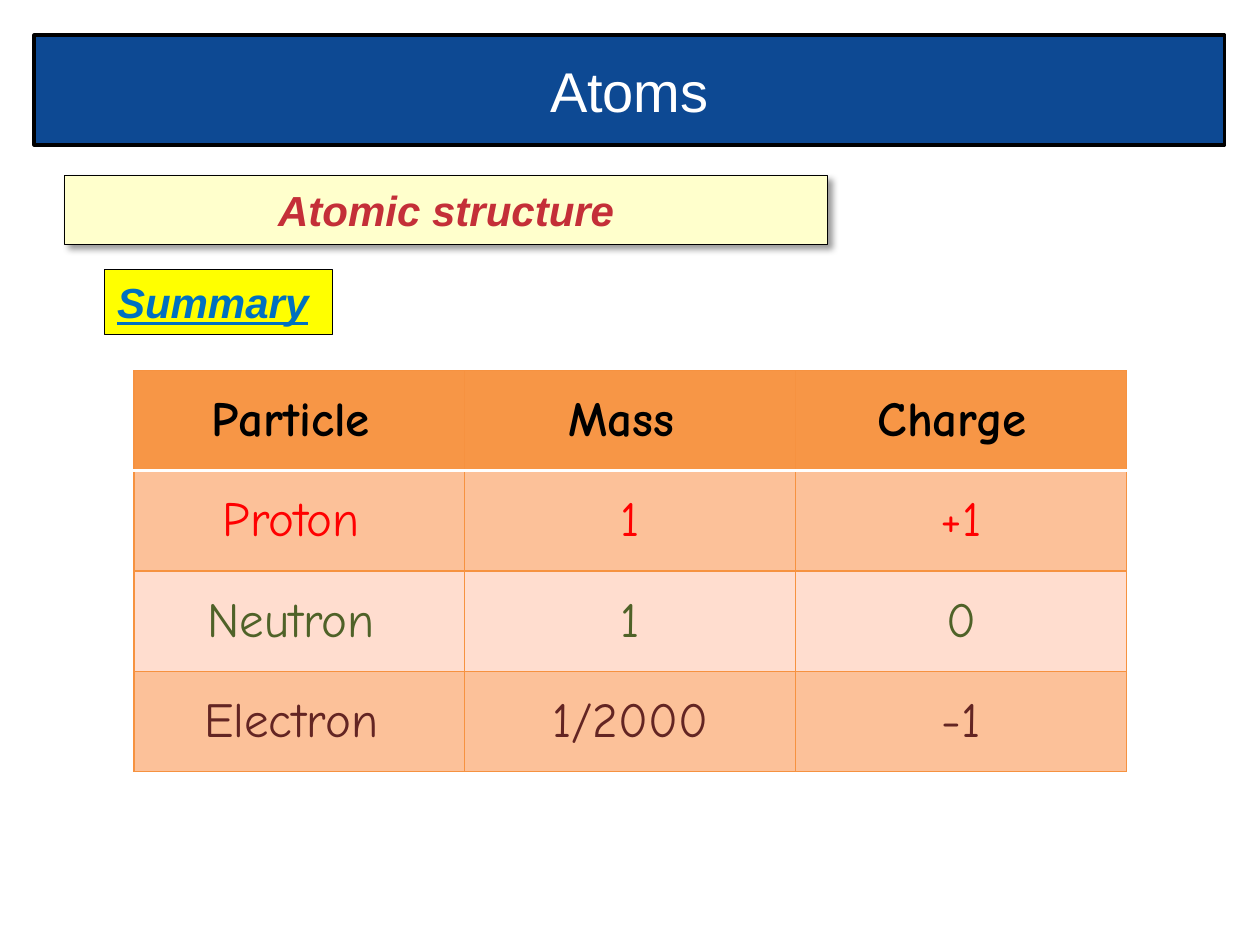
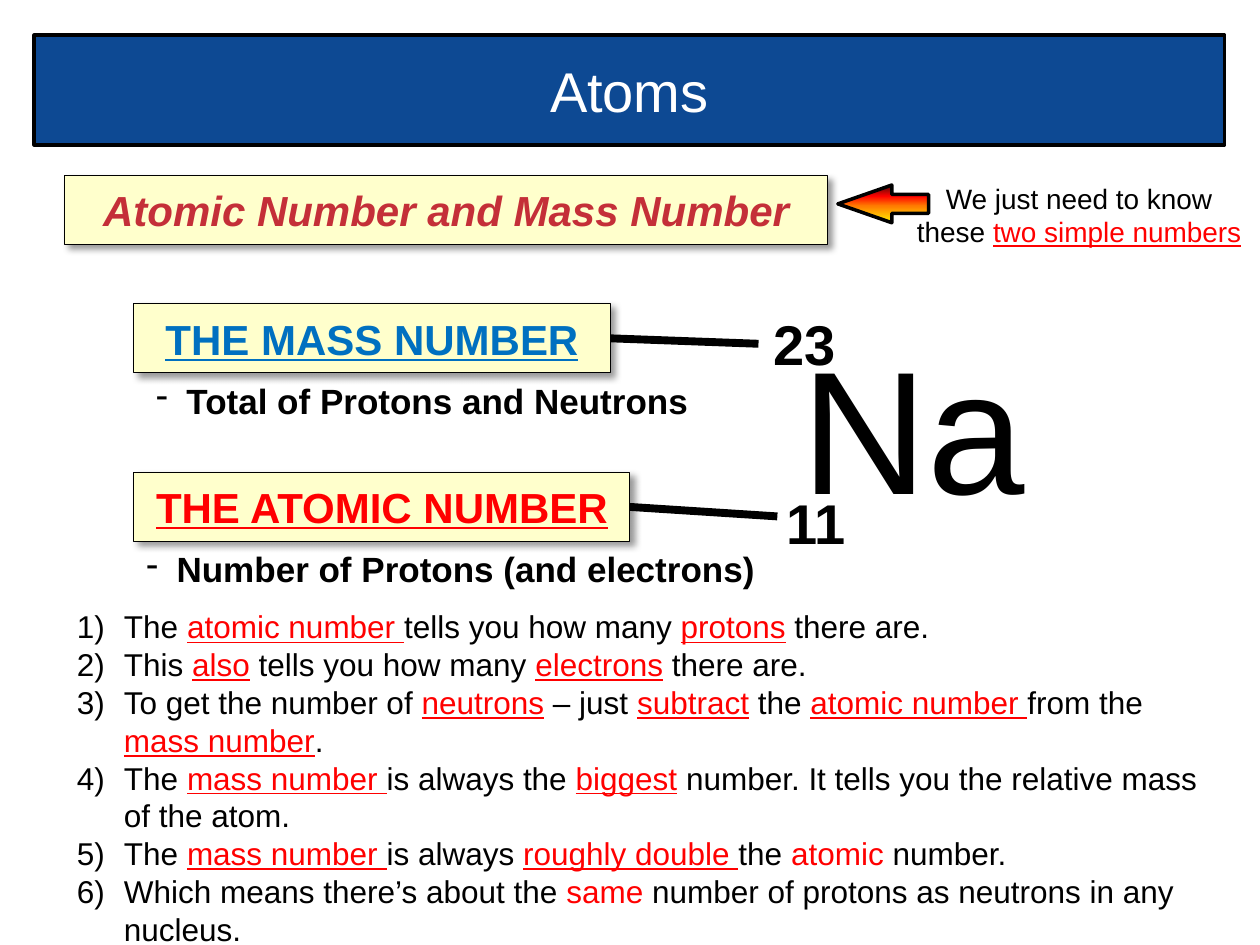
import pptx
import pptx.dml.color
import pptx.enum.shapes
import pptx.enum.text
import pptx.oxml.ns
import pptx.util
from lxml import etree

Cm = pptx.util.Cm
Pt = pptx.util.Pt
qn = pptx.oxml.ns.qn
Align = pptx.enum.text.PP_ALIGN
Anchor = pptx.enum.text.MSO_ANCHOR
Shape = pptx.enum.shapes.MSO_SHAPE

COLOURS = {
    "black": "000000", "white": "FFFFFF", "navy": "0D4993", "cream": "FFFFCC",
    "yellow": "FFFF00", "crimson": "C42F38", "blue": "0070C0", "red": "FF0000",
    "green": "4F6228", "maroon": "632523", "orange": "F79646",
    "grid": "F69240", "row_dark": "FCC199", "row_light": "FFDDCF",
}
FLAME = [(0, "FFF200"), (45, "FF7A00"), (70, "FF0300"), (100, "4D0808")]
BODY_FONT = "Arial"
TABLE_FONT = "Comic Neue"

PARTICLES = [
    ("Particle ", "Mass ", "Charge "),
    ("Proton ", "1", "+1"),
    ("Neutron ", "1", "0"),
    ("Electron ", "1/2000", "-1"),
]
ROW_STYLES = [("orange", "black"), ("row_dark", "red"),
              ("row_light", "green"), ("row_dark", "maroon")]

FACTS = [
    "The |_atomic number |tells you how many |_protons| there are.",
    "This |_also| tells you how many |_electrons| there are.",
    "To get the number of |_neutrons| – just |_subtract| the "
    "|_atomic number |from the |_mass number|.",
    "The |_mass number |is always the |_biggest| number. "
    "It tells you the relative mass of the atom.",
    "The |_mass number |is always |_roughly double |the |atomic |number.",
    "Which means there’s about the |same| number of protons as neutrons in any nucleus.",
]


def colour(name):
    return pptx.dml.color.RGBColor.from_string(COLOURS[name])


def add_xml(parent, tag, **attributes):
    element = etree.SubElement(parent, qn(tag))
    for key, value in attributes.items():
        element.set(key, str(value))
    return element


def add_solid(parent, code):
    return add_xml(add_xml(parent, "a:solidFill"), "a:srgbClr", val=code)


def set_font(font, size, ink="black", name=BODY_FONT, bold=False, italic=False, underline=False):
    font.name = name
    font.size = Pt(size)
    font.color.rgb = colour(ink)
    font.bold = bold
    font.italic = italic
    font.underline = underline


def write(para, text, size, align=Align.LEFT, **style):
    para.alignment = align
    set_font(para.font, size, **style)
    for index, piece in enumerate(text.split("|")):
        span = para.add_run()
        span.text = piece.removeprefix("_")
        if index % 2:
            span.font.color.rgb = colour("red")
            span.font.underline = piece.startswith("_")


def set_bullet(para, indent, tag, **attributes):
    properties = para._p.get_or_add_pPr()
    properties.set("marL", str(Cm(indent)))
    properties.set("indent", str(-Cm(indent)))
    properties.insert(0, add_xml(properties, tag, **attributes))


def add_shadow(box):
    effects = box._element.spPr.find(qn("a:effectLst"))
    shadow = add_xml(effects, "a:outerShdw", blurRad=Pt(4), dist=Pt(3),
                     dir=45 * 60000, algn="tl", rotWithShape=0)
    tint = add_xml(shadow, "a:srgbClr", val=COLOURS["black"])
    add_xml(tint, "a:alpha", val=40000)


def add_shape(page, kind, place, line_width):
    box = page.shapes.add_shape(kind, *map(Cm, place))
    box.shadow.inherit = False
    box.line.color.rgb = colour("black")
    box.line.width = Pt(line_width)
    return box


def add_panel(page, place, text, size, fill, line_width=0.5, shadow=False,
              align=Align.CENTER, **style):
    box = add_shape(page, Shape.RECTANGLE, place, line_width)
    box.fill.solid()
    box.fill.fore_color.rgb = colour(fill)
    if shadow:
        add_shadow(box)
    frame = box.text_frame
    frame.word_wrap = True
    frame.vertical_anchor = Anchor.MIDDLE
    write(frame.paragraphs[0], text, size, align, **style)


def add_label(page, place, lines, size, align=Align.LEFT, **style):
    frame = page.shapes.add_textbox(*map(Cm, place)).text_frame
    frame.word_wrap = True
    frame.auto_size = pptx.enum.text.MSO_AUTO_SIZE.SHAPE_TO_FIT_TEXT
    for index, line in enumerate(lines):
        para = frame.add_paragraph() if index else frame.paragraphs[0]
        write(para, line, size, align, **style)
    return frame.paragraphs


def add_flame_arrow(page, place):
    arrow = add_shape(page, Shape.RIGHT_ARROW, place, 2)
    arrow.rotation = 180
    arrow.adjustments[1] = 1.43
    arrow.fill.gradient()
    arrow.fill.gradient_angle = 270
    stops = arrow._element.spPr.find(".//" + qn("a:gsLst"))
    stops.clear()
    for position, code in FLAME:
        add_xml(add_xml(stops, "a:gs", pos=position * 1000), "a:srgbClr", val=code)


def add_pointer(page, start, end):
    pointer = page.shapes.add_connector(
        pptx.enum.shapes.MSO_CONNECTOR.STRAIGHT, *map(Cm, start + end))
    pointer.line.color.rgb = colour("black")
    pointer.line.width = Pt(4.5)
    add_xml(pointer._element.spPr, "a:effectLst")


def set_borders(cell, row):
    properties = cell._tc.get_or_add_tcPr()
    white_side = {0: "a:lnB", 1: "a:lnT"}.get(row)
    for index, side in enumerate(("a:lnL", "a:lnR", "a:lnT", "a:lnB")):
        ink, width = ("white", 2) if side == white_side else ("grid", 0.75)
        border = add_xml(properties, side, w=Pt(width))
        add_solid(border, COLOURS[ink])
        properties.insert(index, border)


def add_particle_table(page, left, top, column_width, row_height):
    rows, columns = len(PARTICLES), len(PARTICLES[0])
    table = page.shapes.add_table(rows, columns, Cm(left), Cm(top), Cm(column_width * columns),
                                  Cm(row_height * rows)).table
    for row, (values, (fill, ink)) in enumerate(zip(PARTICLES, ROW_STYLES)):
        table.rows[row].height = Cm(row_height)
        for column, value in enumerate(values):
            cell = table.cell(row, column)
            cell.fill.solid()
            cell.fill.fore_color.rgb = colour(fill)
            cell.vertical_anchor = Anchor.MIDDLE
            set_borders(cell, row)
            write(cell.text_frame.paragraphs[0], value, 28, Align.CENTER,
                  ink=ink, name=TABLE_FONT, bold=row == 0)


def add_callout(page, top, width, heading, ink, pointer_end, note_place, note):
    left, height = 2.7, 1.4
    add_panel(page, (left, top, width, height), heading, 24, "cream", shadow=True,
              ink=ink, bold=True, underline=True)
    add_pointer(page, (left + width, top + height / 2), pointer_end)
    paras = add_label(page, note_place, [note], 20, bold=True)
    set_bullet(paras[0], 0.61, "a:buChar", char="-")


def add_page(deck, topic):
    page = deck.slides.add_slide(deck.slide_layouts[6])
    add_panel(page, (0.69, 0.71, 24, 2.21), "Atoms", 32, "navy", line_width=2, ink="white")
    add_panel(page, (1.3, 3.53, 15.39, 1.4), topic, 24, "cream", shadow=True,
              ink="crimson", bold=True, italic=True)
    return page


def build_summary(deck):
    page = add_page(deck, "Atomic structure")
    add_panel(page, (2.11, 5.44, 4.6, 1.3), "Summary", 24, "yellow", line_width=0.75,
              align=Align.LEFT, ink="blue", bold=True, italic=True, underline=True)
    add_particle_table(page, 2.7, 7.47, 6.67, 2.02)


def build_numbers(deck):
    page = add_page(deck, "Atomic Number and Mass Number")
    add_label(page, (18.11, 3.53, 7.29, 1.63),
              ["We just need to know these |_two simple numbers"], 16, Align.CENTER)
    add_flame_arrow(page, (16.89, 3.73, 1.83, 0.76))
    add_label(page, (15.9, 6.32, 5.79, 4.52), ["Na"], 100)
    for left, top, number in ((15.29, 6.12, "23"), (15.49, 9.73, "11")):
        add_label(page, (left, top, 1.8, 1.63), [number], 32, Align.RIGHT, bold=True)
    add_callout(page, 6.12, 9.6, "THE MASS NUMBER", "blue", (15.29, 6.93),
                (2.9, 7.52, 11.4, 1.12), "Total of Protons and Neutrons")
    add_callout(page, 9.52, 10, "THE ATOMIC NUMBER", "red", (15.67, 10.41),
                (2.7, 10.92, 13, 1.12), "Number of Protons (and electrons)")
    for para in add_label(page, (1.3, 12.12, 23.39, 7.95), FACTS, 18):
        set_bullet(para, 0.95, "a:buAutoNum", type="arabicParenR")


def main():
    deck = pptx.Presentation()
    deck.slide_width = Cm(25.4)
    deck.slide_height = Cm(19.05)
    build_summary(deck)
    build_numbers(deck)
    deck.save("out.pptx")


if __name__ == "__main__":
    main()
